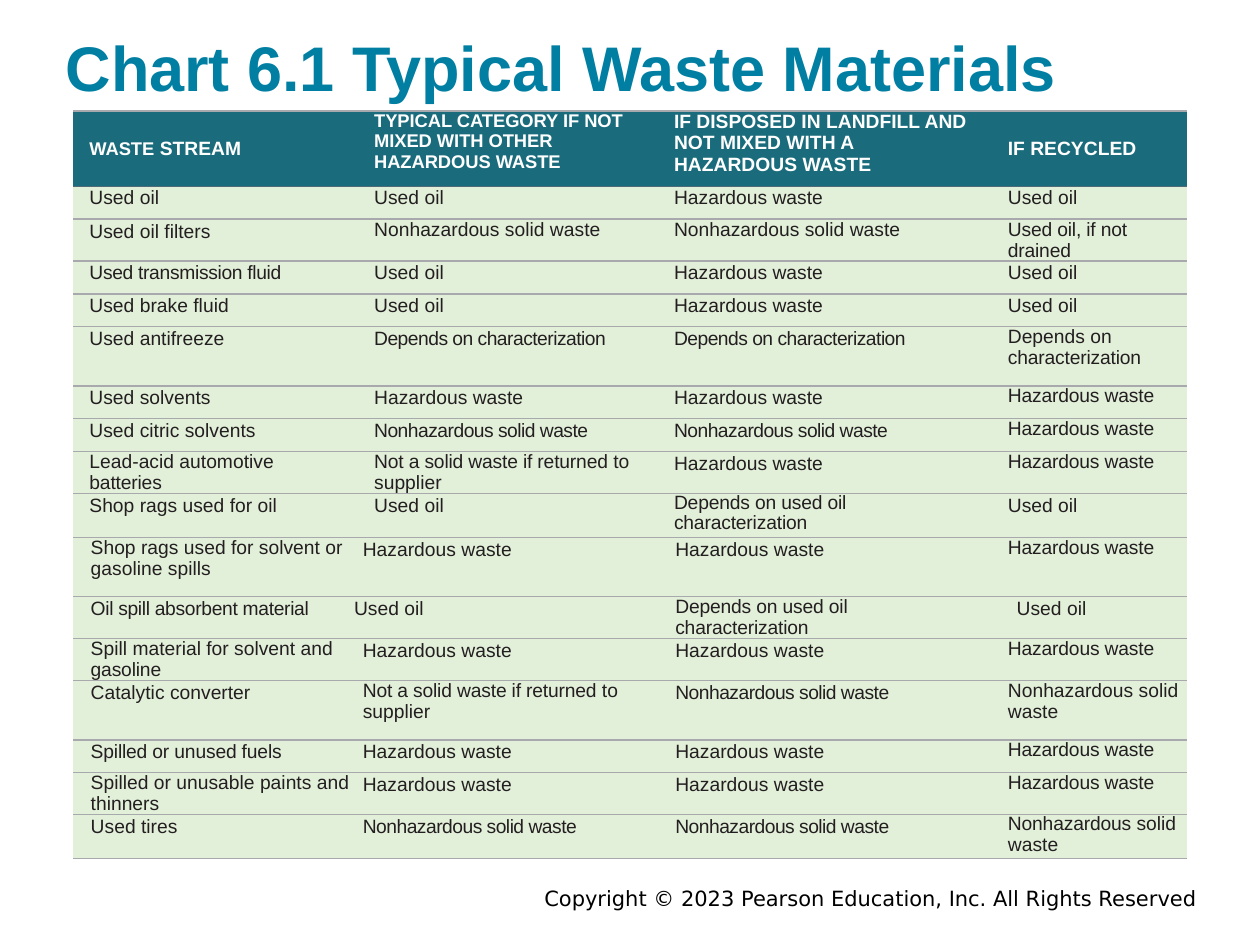
"""Build the slide with the table of typical waste materials."""
from pptx import Presentation
from pptx.dml.color import RGBColor
from pptx.enum.text import MSO_ANCHOR, MSO_AUTO_SIZE, PP_ALIGN
from pptx.oxml import parse_xml
from pptx.oxml.ns import nsdecls
from pptx.util import Emu, Inches, Pt

TITLE = "Chart 6.1 Typical Waste Materials"
COPYRIGHT = "Copyright © 2023 Pearson Education, Inc. All Rights Reserved"

HEADERS = [
    ([("WASTE", 10.5), (" STREAM", 11)], MSO_ANCHOR.MIDDLE),
    ([("TYPICAL CATEGORY IF NOT MIXED WITH OTHER HAZARDOUS WASTE", 10.5)], MSO_ANCHOR.TOP),
    ([("IF DISPOSED IN LANDFILL AND NOT MIXED WITH A HAZARDOUS WASTE", 11)], MSO_ANCHOR.TOP),
    ([("IF RECYCLED", 11)], MSO_ANCHOR.MIDDLE),
]

OIL = "Used oil"
HAZARDOUS = "Hazardous waste"
NONHAZARDOUS = "Nonhazardous solid waste"
DEPENDS = "Depends on characterization"
DEPENDS_OIL = "Depends on used oil characterization"
RETURNED = "Not a solid waste if returned |to supplier"
NONHAZARDOUS_SPLIT = "Nonhazardous |solid waste"

# Row height, line-spacing key of each cell, then the four texts; "|" parts runs.
WASTES = [
    (0.26, "FFFF", OIL, OIL, HAZARDOUS, OIL),
    (0.33, "STTT", "Used oil filters", NONHAZARDOUS, NONHAZARDOUS, "Used oil, if not drained"),
    (0.26, "FFFF", "Used transmission fluid", OIL, HAZARDOUS, OIL),
    (0.26, "FFFF", "Used brake fluid", OIL, HAZARDOUS, OIL),
    (0.47, "SSST", "Used antifreeze", DEPENDS, DEPENDS, "Depends on |characterization"),
    (0.26, "SSST", "Used solvents", HAZARDOUS, HAZARDOUS, HAZARDOUS),
    (0.26, "SSST", "Used citric solvents", NONHAZARDOUS, NONHAZARDOUS, HAZARDOUS),
    (0.33, "TTST", "Lead-acid automotive |batteries", RETURNED, HAZARDOUS, HAZARDOUS),
    (0.35, "SSCS", "Shop rags used for oil", OIL, DEPENDS_OIL, OIL),
    (0.47, "TSST", "Shop rags used for solvent or gasoline spills", HAZARDOUS, HAZARDOUS, HAZARDOUS),
    (0.33, "SSTS", "Oil spill absorbent material", OIL, DEPENDS_OIL, OIL),
    (0.33, "TSST", "Spill material for solvent and |gasoline", HAZARDOUS, HAZARDOUS, HAZARDOUS),
    (0.47, "STST", "Catalytic converter", RETURNED, NONHAZARDOUS, NONHAZARDOUS_SPLIT),
    (0.26, "SSST", "Spilled or unused fuels", HAZARDOUS, HAZARDOUS, HAZARDOUS),
    (0.33, "TSST", "Spilled or unusable paints and thinners", HAZARDOUS, HAZARDOUS, HAZARDOUS),
    (0.35, "SSSC", "Used tires", NONHAZARDOUS, NONHAZARDOUS, NONHAZARDOUS_SPLIT),
]
LINE_SPACING = {"F": Pt(12.6), "T": Pt(12), "S": 1.07, "C": 0.95}
TRACKING = {
    ("F", "Used transmission fluid"): -20,
    ("S", "Oil spill absorbent material"): -20,
    ("S", "Spilled or unused fuels"): -10,
    ("S", DEPENDS): -30,
    ("S", NONHAZARDOUS): -30,
    ("T", HAZARDOUS): -10,
    ("T", "Used oil, if not drained"): -10,
    ("T", "characterization"): -10,
    ("T", "batteries"): -10,
    ("T", "gasoline"): -10,
    ("T", "Not a solid waste if returned "): -10,
    ("T", DEPENDS_OIL): -10,
    ("C", DEPENDS_OIL): -10,
    ("C", "Nonhazardous "): -10,
}

COLUMNS = [2.19, 0.07, 2.38, 2.51, 0.07, 1.62]
HEADER_HEIGHT = 0.6
UPPER_SPANS = [(0, 0), (1, 2), (3, 4), (5, 5)]
LOWER_SPANS = [(0, 1), (2, 2), (3, 3), (4, 5)]
UPPER_INDENTS = [0.13, 0.2, 0.13, 0.2]
LOWER_INDENTS = [0.14, 0.04, 0.14, 0.27]
FIRST_LOWER_ROW, OIL_SPILL_ROW = 10, 11

WHITE = RGBColor(0xFF, 0xFF, 0xFF)
BLACK = RGBColor(0, 0, 0)
INK = RGBColor(0x23, 0x1F, 0x20)
TITLE_BLUE = RGBColor(0x00, 0x7F, 0xA3)
TEAL = RGBColor(0x1A, 0x6C, 0x7C)
PALE_GREEN = RGBColor(0xE2, 0xEF, 0xD9)
RULE_GREY = RGBColor(0xA7, 0xA9, 0xAC)
RULE_SLATE = RGBColor(0x4F, 0x6B, 0x79)


def format_run(run, size, color, bold=False, face="Arial"):
    run.font.size, run.font.bold, run.font.name = Pt(size), bold, face
    run.font.color.rgb = color


def paint(cell, fill, top, bottom):
    properties = cell._tc.get_or_add_tcPr()
    for side, color in (("L", None), ("R", None), ("T", top), ("B", bottom)):
        ink = f'<a:solidFill><a:srgbClr val="{color}"/></a:solidFill>' if color else "<a:noFill/>"
        properties.append(parse_xml(f'<a:ln{side} {nsdecls("a")} w="12700">{ink}</a:ln{side}>'))
    cell.fill.solid()
    cell.fill.fore_color.rgb = fill
    cell.margin_left = cell.margin_right = cell.margin_top = cell.margin_bottom = 0


def write(cell, indent, pieces, color, bold, spacing):
    paragraph = cell.text_frame.paragraphs[0]
    paragraph._p.get_or_add_pPr().set("marL", str(Inches(indent)))
    paragraph.line_spacing = spacing
    for text, size, tracking in pieces:
        run = paragraph.add_run()
        run.text = text
        format_run(run, size, color, bold)
        run._r.get_or_add_rPr().set("spc", str(tracking))


def add_waste_table(slide):
    heights = [HEADER_HEIGHT] + [waste[0] for waste in WASTES]
    table = slide.shapes.add_table(
        len(heights), len(COLUMNS), Inches(0.58), Inches(0.88),
        Inches(sum(COLUMNS)), Inches(sum(heights))).table
    table.horz_banding = False
    for column, width in zip(table.columns, COLUMNS):
        column.width = Inches(width)
    for r, height in enumerate(heights):
        table.rows[r].height = Inches(height)
        top = RULE_SLATE if r == 1 else RULE_GREY
        bottom = RULE_SLATE if r == 0 else RULE_GREY
        for cell in table.rows[r].cells:
            paint(cell, PALE_GREEN if r else TEAL, top, bottom)
        lower = r >= FIRST_LOWER_ROW
        spans = LOWER_SPANS if lower and r != OIL_SPILL_ROW else UPPER_SPANS
        indents = LOWER_INDENTS if lower else UPPER_INDENTS
        for i, ((first, last), indent) in enumerate(zip(spans, indents)):
            cell = table.cell(r, first)
            if last > first:
                cell.merge(table.cell(r, last))
            if r == 0:
                pieces, cell.vertical_anchor = HEADERS[i]
                write(cell, indent, [(*piece, 0) for piece in pieces], WHITE, True, 1.0)
            else:
                _, keys, *texts = WASTES[r - 1]
                pieces = [(text, 11, TRACKING.get((keys[i], text), 0)) for text in texts[i].split("|")]
                write(cell, indent, pieces, INK, False, LINE_SPACING[keys[i]])


def main():
    deck = Presentation()
    deck.slide_width, deck.slide_height = Inches(10), Inches(7.5)
    slide = deck.slides.add_slide(deck.slide_layouts[5])

    title = slide.shapes.title
    title.left, title.top, title.width, title.height = map(Inches, (0.52, 0.27, 9, 0.61))
    frame = title.text_frame
    frame.text = TITLE
    frame.margin_left = frame.margin_right = Emu(0)
    frame.vertical_anchor = MSO_ANCHOR.BOTTOM
    frame.auto_size = MSO_AUTO_SIZE.SHAPE_TO_FIT_TEXT
    frame.paragraphs[0].alignment = PP_ALIGN.LEFT
    format_run(frame.paragraphs[0].runs[0], 36, TITLE_BLUE, True)

    add_waste_table(slide)

    footer = slide.shapes.add_textbox(*map(Inches, (1.77, 6.98, 7.83, 0.3))).text_frame
    footer.word_wrap = True
    footer.auto_size = MSO_AUTO_SIZE.SHAPE_TO_FIT_TEXT
    footer.text = COPYRIGHT
    footer.paragraphs[0].alignment = PP_ALIGN.RIGHT
    format_run(footer.paragraphs[0].runs[0], 12, BLACK, face="DejaVu Sans")

    deck.save("out.pptx")


if __name__ == "__main__":
    main()
